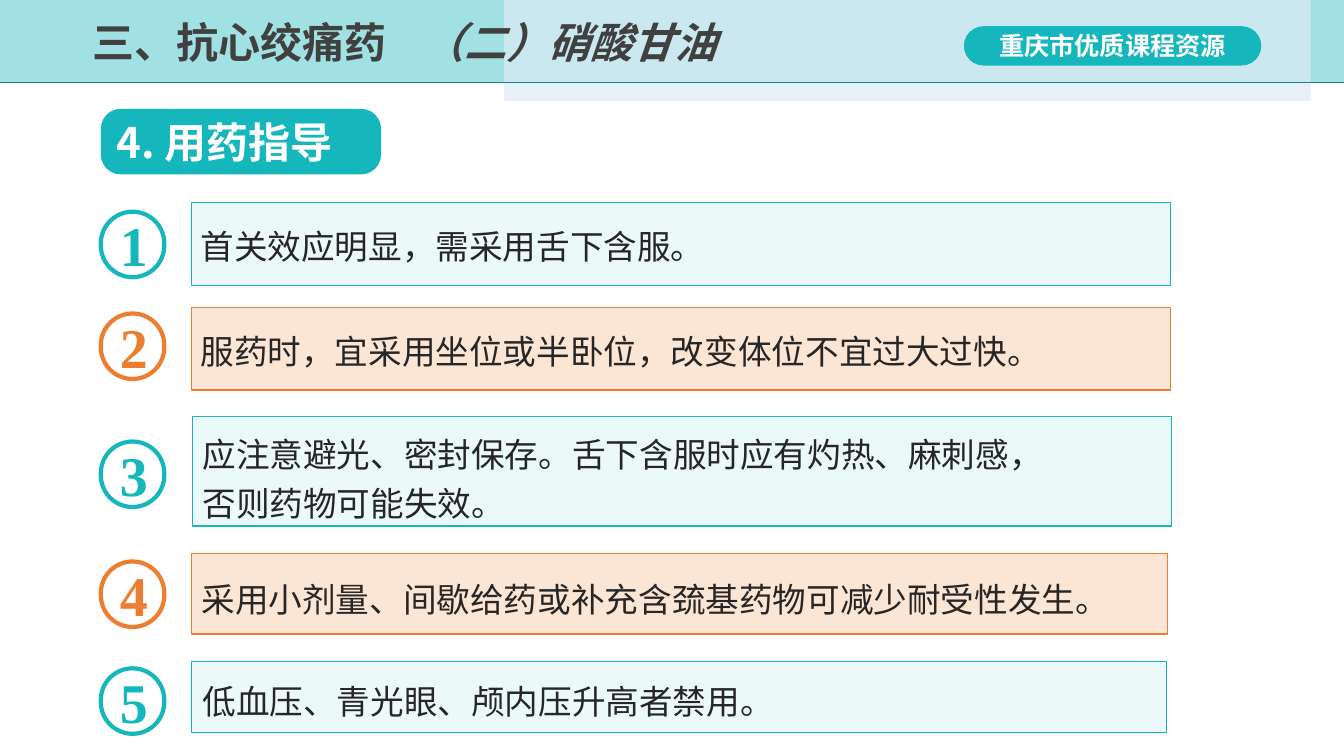
from lxml import etree
from pptx import Presentation
from pptx.dml.color import RGBColor
from pptx.enum.shapes import MSO_CONNECTOR, MSO_SHAPE
from pptx.enum.text import MSO_ANCHOR, MSO_AUTO_SIZE, PP_ALIGN
from pptx.oxml.ns import qn
from pptx.util import Inches, Pt

# Content
TITLE = "三、抗心绞痛药"
SUBTITLE = "（二）硝酸甘油"
BADGE = "重庆市优质课程资源"
HEADING = "4. 用药指导"

SANS, SERIF = "Noto Sans CJK SC", "Times New Roman"
TEAL, ORANGE, PALE_TEAL = "15B6BC", "ED7D31", "A1E2E4"
DARK, BLACK, WHITE = "404040", "262626", "FFFFFF"

# Advice: text, ring top, box (left, top, width, height), text area, anchor
TOP, MIDDLE = MSO_ANCHOR.TOP, MSO_ANCHOR.MIDDLE
ADVICE = [
    ("首关效应明显，需采用舌下含服。",
     2.10, (1.9, 2.01, 9.71, 0.82), (1.89, 2.11, 8.54, 0.56), TOP),
    ("服药时，宜采用坐位或半卧位，改变体位不宜过大过快。",
     3.11, (1.9, 3.05, 9.71, 0.82), (1.89, 3.15, 8.54, 0.56), TOP),
    ("应注意避光、密封保存。舌下含服时应有灼热、麻刺感，否则药物可能失效。",
     4.38, (1.91, 4.13, 9.71, 1.09), (1.91, 4.18, 8.81, 1.04), TOP),
    ("采用小剂量、间歇给药或补充含巯基药物可减少耐受性发生。",
     5.57, (1.9, 5.49, 9.68, 0.8), (1.9, 5.62, 9.71, 0.56), MIDDLE),
    ("低血压、青光眼、颅内压升高者禁用。",
     6.63, (1.9, 6.56, 9.67, 0.71), (1.91, 6.63, 8.43, 0.56), TOP),
]

prs = Presentation()
prs.slide_width, prs.slide_height = Inches(13.33), Inches(7.5)
s = prs.slides.add_slide(prs.slide_layouts[5])


def rgb(color):
    return RGBColor.from_string(color)


def paint(sp, fill=None, alpha=100, line=None, width=1):
    sp.shadow.inherit = False
    if fill:
        sp.fill.solid()
        sp.fill.fore_color.rgb = rgb(fill)
        if alpha < 100:
            clr = sp._element.spPr.find(qn("a:solidFill"))[0]
            etree.SubElement(clr, qn("a:alpha"), val=str(alpha * 1000))
    else:
        sp.fill.background()
    if line:
        sp.line.color.rgb = rgb(line)
        sp.line.width = Pt(width)
    else:
        sp.line.fill.background()
    return sp


def add_box(kind, box, corner=None, **look):
    sp = s.shapes.add_shape(kind, *map(Inches, box))
    if corner is not None:
        sp.adjustments[0] = corner
    return paint(sp, **look)


def write(sp, text, size, color, font=SANS, bold=True, italic=None,
          align=PP_ALIGN.LEFT, anchor=MIDDLE, spacing=None, after=None,
          grow=False):
    tf = sp.text_frame
    tf.word_wrap = True
    tf.auto_size = MSO_AUTO_SIZE.SHAPE_TO_FIT_TEXT if grow else MSO_AUTO_SIZE.NONE
    tf.vertical_anchor = anchor
    p = tf.paragraphs[0]
    p.alignment, p.line_spacing = align, spacing
    if after:
        p.space_after = Pt(after)
    r = p.add_run()
    r.text = text
    f = r.font
    f.name, f.size, f.bold, f.italic = font, Pt(size), bold, italic
    f.color.rgb = rgb(color)
    etree.SubElement(r._r.get_or_add_rPr(), qn("a:ea"), typeface=font)


# Header band with a paler right part whose left edge is a cubic curve
add_box(MSO_SHAPE.RECTANGLE, (0, 0, 13.33, 0.82), fill=TEAL, alpha=40)
curve = [(4.71, 0.82), (4.86, 0.55), (5.07, 0.24), (5.12, -0.01)]
edge = []
for step in range(9):
    t = step / 8
    weights = ((1 - t) ** 3, 3 * t * (1 - t) ** 2, 3 * t * t * (1 - t), t ** 3)
    edge.append([sum(w * pt[axis] for w, pt in zip(weights, curve))
                 for axis in (0, 1)])
pen = s.shapes.build_freeform(*edge[0], scale=Inches(1))
pen.add_line_segments(edge[1:] + [(13.34, -0.01), (13.34, 0.82)], close=True)
paint(pen.convert_to_shape(), fill="DEEBF7", alpha=70)

badge = add_box(MSO_SHAPE.ROUNDED_RECTANGLE, (9.56, 0.26, 2.95, 0.39), 0.5,
                fill=TEAL)
write(badge, BADGE, 18, WHITE, align=PP_ALIGN.CENTER)

rule = s.shapes.add_connector(MSO_CONNECTOR.STRAIGHT, 0, Inches(0.82),
                              prs.slide_width, Inches(0.82))
rule.line.color.rgb = rgb("0F858B")
rule.line.width = Pt(1)
etree.SubElement(rule._element.spPr, qn("a:effectLst"))

# Title, brought in front of the band
title = s.shapes.title
title.left, title.top, title.width, title.height = map(
    Inches, (0.82, 0.08, 3.25, 0.74))
s.shapes._spTree.append(title._element)
write(title, TITLE, 30, DARK, spacing=0.9)
subtitle = s.shapes.add_textbox(*map(Inches, (4.09, 0.08, 4.33, 0.74)))
write(subtitle, SUBTITLE, 30, DARK, italic=True, spacing=0.9)

# Section heading
heading = add_box(MSO_SHAPE.ROUNDED_RECTANGLE, (1, 1.08, 2.78, 0.65), 0.304,
                  fill=TEAL)
write(heading, HEADING, 30, WHITE)

# Numbered advice, in alternating colours
for number, (advice, ring_top, box, area, anchor) in enumerate(ADVICE, 1):
    color, fill = (TEAL, PALE_TEAL) if number % 2 else (ORANGE, ORANGE)
    ring = add_box(MSO_SHAPE.ROUNDED_RECTANGLE, (1, ring_top, 0.63, 0.65), 0.5,
                   line=color, width=3)
    write(ring, str(number), 40, color, font=SERIF, align=PP_ALIGN.CENTER)
    add_box(MSO_SHAPE.RECTANGLE, box, fill=fill, alpha=20, line=color)
    label = s.shapes.add_textbox(*map(Inches, area))
    write(label, advice, 24, BLACK, bold=False, anchor=anchor, spacing=1.2,
          after=5, grow=True)

prs.save("out.pptx")
